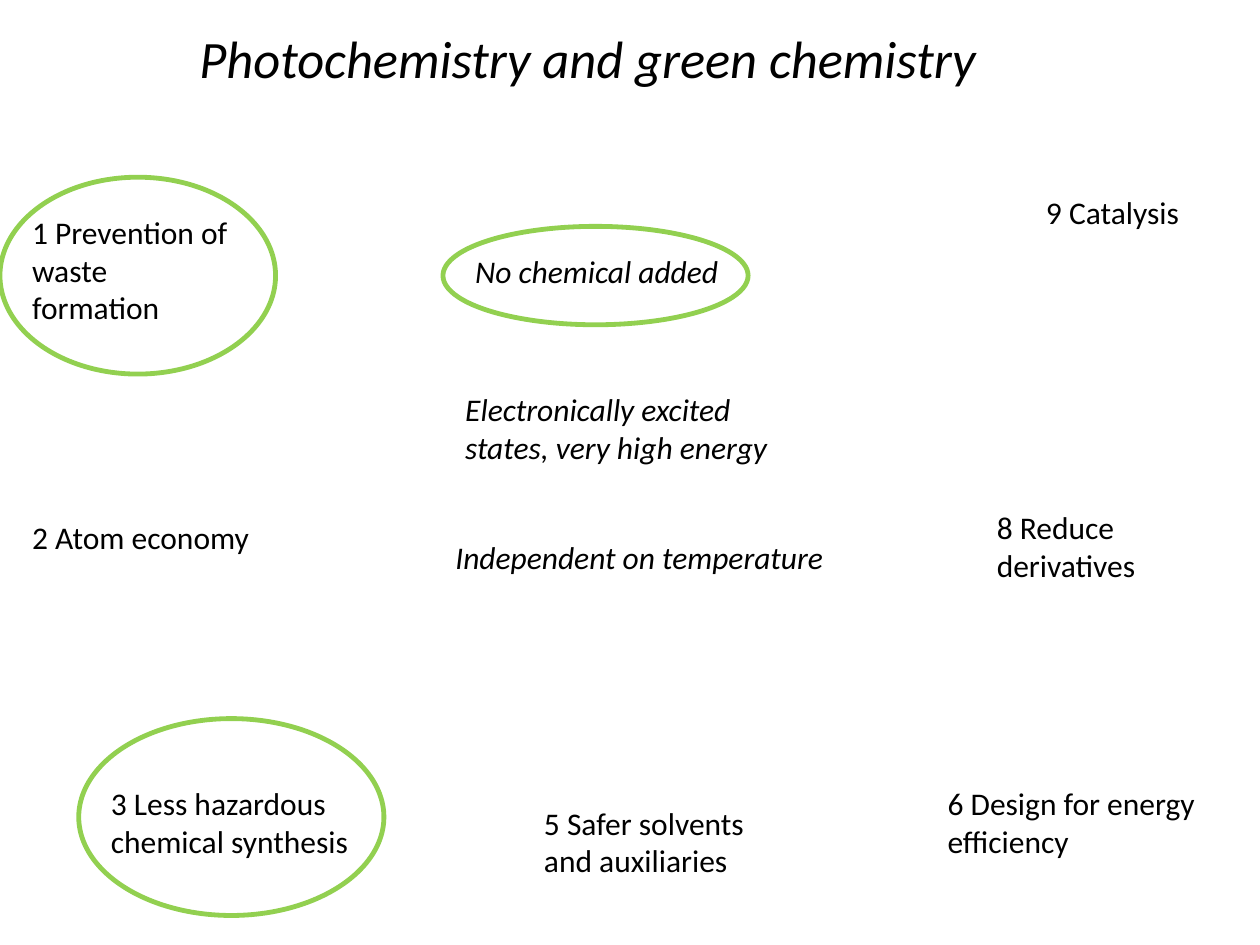
from dataclasses import dataclass

from pptx import Presentation
from pptx.dml.color import RGBColor
from pptx.enum.shapes import MSO_SHAPE
from pptx.enum.text import MSO_AUTO_SIZE
from pptx.util import Inches, Pt

ELLIPSE = MSO_SHAPE.OVAL
GROW = MSO_AUTO_SIZE.SHAPE_TO_FIT_TEXT

SLIDE_W, SLIDE_H = 10, 7.5
CELL = SLIDE_W / 128  # the slide is a grid of 128 columns by 96 rows


@dataclass(frozen=True)
class Theme:
    font: str = "Calibri"
    ink: RGBColor = RGBColor(0x00, 0x00, 0x00)
    ring: RGBColor = RGBColor(0x92, 0xD0, 0x50)
    ring_width: float = 2.75
    title_size: int = 30
    body_size: int = 18


THEME = Theme()

# Each entry: column, row, columns wide, lines of text, paragraphs
PRINCIPLES = [
    (2, 21, 30, 3, ["1 Prevention of waste", "formation"]),
    (2, 52, 26, 1, ["2 Atom economy"]),
    (10, 79, 29, 2, ["3 Less hazardous chemical synthesis"]),
    (54, 81, 26, 2, ["5 Safer solvents and auxiliaries"]),
    (95, 79, 30, 2, ["6 Design for energy efficiency"]),
    (100, 51, 24, 2, ["8 Reduce derivatives"]),
    (105, 19, 19, 1, ["9 Catalysis"]),
]
PHOTOCHEMICAL_TRAITS = [
    (46, 39, 35, 2, ["Electronically excited states, very high energy"]),
    (47, 25, 36, 1, ["No chemical added"]),
    (45, 54, 43, 1, ["Independent on temperature"]),
]
# Each ring: column, row, columns wide, rows high
RINGS = [(45, 23, 31, 10), (0, 18, 28, 20), (8, 73, 31, 20)]


def cells(count):
    return Inches(count * CELL)


def add_label(slide, box, size, italic=False):
    """Place text in a box given as column, row, columns, lines, paragraphs."""
    column, row, columns, lines, paragraphs = box
    height = Inches(0.1) + Pt(lines * size * 1.22)
    label = slide.shapes.add_textbox(cells(column), cells(row), cells(columns), height)
    frame = label.text_frame
    frame.word_wrap = True
    frame.auto_size = GROW
    for index, wording in enumerate(paragraphs):
        paragraph = frame.add_paragraph() if index else frame.paragraphs[0]
        run = paragraph.add_run()
        run.text = wording
        run.font.name = THEME.font
        run.font.size = Pt(size)
        run.font.italic = italic
        run.font.color.rgb = THEME.ink


def add_labels(slide, boxes, italic=False):
    for box in boxes:
        add_label(slide, box, THEME.body_size, italic)


def add_rings(slide, boxes):
    for box in boxes:
        ring = slide.shapes.add_shape(ELLIPSE, *map(cells, box))
        ring.shadow.inherit = False
        ring.fill.background()
        ring.line.color.rgb = THEME.ring
        ring.line.width = Pt(THEME.ring_width)


def add_title(slide, box):
    add_label(slide, box, THEME.title_size, italic=True)


def main():
    deck = Presentation()
    deck.slide_width, deck.slide_height = Inches(SLIDE_W), Inches(SLIDE_H)
    slide = deck.slides.add_slide(deck.slide_layouts[6])
    add_labels(slide, PRINCIPLES)
    add_labels(slide, PHOTOCHEMICAL_TRAITS, italic=True)
    add_rings(slide, RINGS)
    add_title(slide, (19, 2, 105, 1, ["Photochemistry and green chemistry"]))
    deck.save("out.pptx")


if __name__ == "__main__":
    main()
